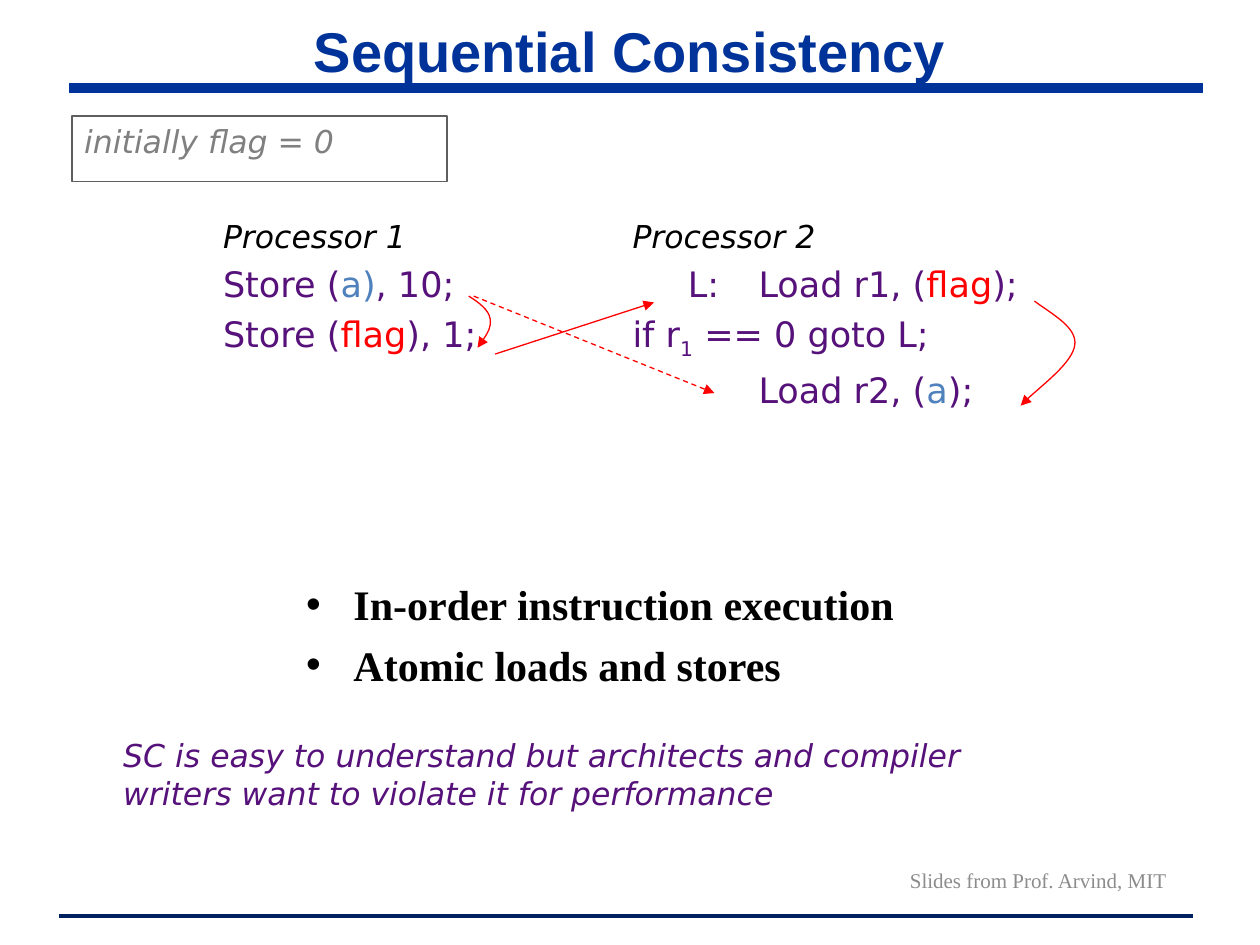
from dataclasses import dataclass

from lxml import etree
from pptx import Presentation
from pptx.dml.color import RGBColor
from pptx.enum import dml, shapes, text
from pptx.oxml import ns
from pptx.util import Inches, Pt


@dataclass(frozen=True)
class Theme:
    sans: str = "DejaVu Sans"
    serif: str = "Times New Roman"
    heading: str = "Arial"
    blue: str = "003399"
    navy: str = "002060"
    purple: str = "56127A"
    sky: str = "4F81BD"
    red: str = "FF0000"
    black: str = "000000"
    gray: str = "808080"
    light_gray: str = "8C8C8C"
    frame: str = "5F5F5F"
    title_size: float = 32
    bullet_size: float = 24
    code_size: float = 20
    label_size: float = 18
    credit_size: float = 12


THEME = Theme()


@dataclass(frozen=True)
class Style:
    font: str
    size: float
    color: str
    bold: bool = False
    italic: bool = False


@dataclass(frozen=True)
class Run:
    text: str
    style: Style
    subscript: bool = False


@dataclass(frozen=True)
class CodeLine:
    runs: list[Run]
    tab_stops: list[float]


@dataclass(frozen=True)
class Line:
    start: tuple[float, float]
    end: tuple[float, float]
    color: str
    width: float
    arrow: bool = False
    dashed: bool = False


TITLE = Style(THEME.heading, THEME.title_size, THEME.blue, bold=True)
BULLET = Style(THEME.serif, THEME.bullet_size, THEME.black, bold=True)
CREDIT = Style(THEME.serif, THEME.credit_size, THEME.light_gray)
INITIAL = Style(THEME.sans, THEME.label_size, THEME.gray, italic=True)
REMARK = Style(THEME.sans, THEME.label_size, THEME.purple, italic=True)
PROCESSOR = Style(THEME.sans, THEME.label_size, THEME.black, italic=True)
CODE = Style(THEME.sans, THEME.code_size, THEME.purple)
DATA = Style(THEME.sans, THEME.code_size, THEME.sky)
FLAG = Style(THEME.sans, THEME.code_size, THEME.red)

# Tab stops, measured from the left edge of processor 1's code
SECOND_COLUMN, LOOP_LABEL, LOAD = 3.25, 3.69, 4.25

PROGRAM = [
    CodeLine([Run("Processor 1\tProcessor 2", PROCESSOR)], [SECOND_COLUMN]),
    CodeLine([Run("Store (", CODE), Run("a)", DATA), Run(", 10;\tL:\tLoad r1, (", CODE),
              Run("flag", FLAG), Run(");", CODE)], [LOOP_LABEL, LOAD]),
    CodeLine([Run("Store (", CODE), Run("flag", FLAG), Run("), 1;\tif r", CODE),
              Run("1", CODE, subscript=True), Run(" == 0 goto L;", CODE)], [SECOND_COLUMN]),
    CodeLine([Run("\tLoad r2, (", CODE), Run("a", DATA), Run(");", CODE)], [LOAD]),
]

LINES = [
    Line((0.47, 7.27), (9.47, 7.27), THEME.navy, 2.25),
    Line((0.55, 0.7), (9.55, 0.7), THEME.blue, 6),
    Line((3.93, 2.81), (5.19, 2.4), THEME.red, 0.75, arrow=True),
    Line((3.76, 2.35), (5.67, 3.12), THEME.red, 0.75, arrow=True, dashed=True),
]

# Each curve: a start point, then three Bezier points per segment
ORDER_CURVES = [
    [(3.72, 2.35), (3.8, 2.4), (3.88, 2.46), (3.89, 2.53),
     (3.9, 2.6), (3.85, 2.68), (3.79, 2.76)],
    [(8.21, 2.39), (8.36, 2.5), (8.55, 2.6), (8.53, 2.74),
     (8.51, 2.88), (8.19, 3.12), (8.1, 3.22)],
]


def place(shape, left: float, top: float, width: float, height: float) -> None:
    shape.left, shape.top = Inches(left), Inches(top)
    shape.width, shape.height = Inches(width), Inches(height)


def add_run(paragraph, run: Run) -> None:
    part = paragraph.add_run()
    part.text = run.text
    font, style = part.font, run.style
    font.name, font.size = style.font, Pt(style.size)
    font.bold, font.italic = style.bold, style.italic
    font.color.rgb = RGBColor.from_string(style.color)
    if run.subscript:
        part._r.get_or_add_rPr().set("baseline", "-25000")


def write(frame, lines: list[str], style: Style, align=text.PP_ALIGN.LEFT,
          anchor=text.MSO_ANCHOR.TOP, gap: float = 0) -> None:
    frame.word_wrap, frame.auto_size = True, text.MSO_AUTO_SIZE.NONE
    frame.vertical_anchor = anchor
    for number, line in enumerate(lines):
        paragraph = frame.add_paragraph() if number else frame.paragraphs[0]
        paragraph.alignment = align
        paragraph.space_before = Pt(gap if number else 0)
        add_run(paragraph, Run(line, style))


def write_program(frame, program: list[CodeLine]) -> None:
    frame.word_wrap = True
    frame.margin_left = Inches(1.1)
    for number, line in enumerate(program):
        paragraph = frame.add_paragraph() if number else frame.paragraphs[0]
        paragraph.space_before = Pt(4.7 if number else 0)
        tabs = etree.SubElement(paragraph._p.get_or_add_pPr(), ns.qn("a:tabLst"))
        for stop in line.tab_stops:
            etree.SubElement(tabs, ns.qn("a:tab"), pos=str(Inches(stop)), algn="l")
        for run in line.runs:
            add_run(paragraph, run)


def style_line(shape, color: str, width: float, arrow: bool = False) -> None:
    shape.line.color.rgb = RGBColor.from_string(color)
    shape.line.width = Pt(width)
    if arrow:
        etree.SubElement(shape.line._get_or_add_ln(), ns.qn("a:tailEnd"), type="triangle")


def add_line(slide, line: Line) -> None:
    ends = [Inches(value) for value in (*line.start, *line.end)]
    connector = slide.shapes.add_connector(shapes.MSO_CONNECTOR.STRAIGHT, *ends)
    if line.dashed:
        connector.line.dash_style = dml.MSO_LINE.DASH
    style_line(connector, line.color, line.width, line.arrow)
    etree.SubElement(connector._element.spPr, ns.qn("a:effectLst"))


def add_curve(slide, points: list[tuple[float, float]]) -> None:
    """Build an outline through the points, then join each three into a Bezier segment."""
    scaled = [(Inches(x), Inches(y)) for x, y in points]
    builder = slide.shapes.build_freeform(*scaled[0])
    builder.add_line_segments(scaled[1:], close=False)
    curve = builder.convert_to_shape()
    segments = list(curve._element.iter(ns.qn("a:lnTo")))
    outline = segments[0].getparent()
    for first in range(0, len(segments), 3):
        bezier = etree.SubElement(outline, ns.qn("a:cubicBezTo"))
        for segment in segments[first:first + 3]:
            bezier.append(segment[0])
            outline.remove(segment)
    curve.shadow.inherit = False
    curve.fill.background()
    style_line(curve, THEME.red, 0.75, arrow=True)


def add_text(slide, left: float, top: float, width: float, height: float):
    return slide.shapes.add_textbox(*map(Inches, (left, top, width, height))).text_frame


def main() -> None:
    deck = Presentation()
    deck.slide_width, deck.slide_height = Inches(10), Inches(7.5)
    slide = deck.slides.add_slide(deck.slide_layouts[1])
    center, middle = text.PP_ALIGN.CENTER, text.MSO_ANCHOR.MIDDLE

    title, conditions = slide.placeholders
    place(title, 0.5, 0.16, 9, 0.47)
    write(title.text_frame, ["Sequential Consistency"], TITLE, center, middle)
    place(conditions, 2.33, 4.5, 6.27, 1.14)
    conditions.text_frame.margin_top = Inches(0.09)
    write(conditions.text_frame, ["In-order instruction execution", "Atomic loads and stores"],
          BULLET, gap=6)

    write(add_text(slide, 7.05, 6.82, 2.38, 0.33), ["Slides from Prof. Arvind, MIT"],
          CREDIT, center, middle)
    write(add_text(slide, 0.88, 5.79, 9.1, 0.91),
          ["SC is easy to understand but architects and compiler",
           "writers want to violate it for performance"], REMARK)
    write_program(add_text(slide, 0.67, 1.67, 8.92, 1.92), PROGRAM)

    initial_state = slide.shapes.add_shape(
        shapes.MSO_SHAPE.RECTANGLE, *map(Inches, (0.57, 0.92, 2.98, 0.52)))
    initial_state.shadow.inherit = False
    initial_state.fill.background()
    style_line(initial_state, THEME.frame, 1)
    write(initial_state.text_frame, ["initially flag = 0"], INITIAL)

    for line in LINES:
        add_line(slide, line)
    for curve in ORDER_CURVES:
        add_curve(slide, curve)
    deck.save("out.pptx")


if __name__ == "__main__":
    main()
